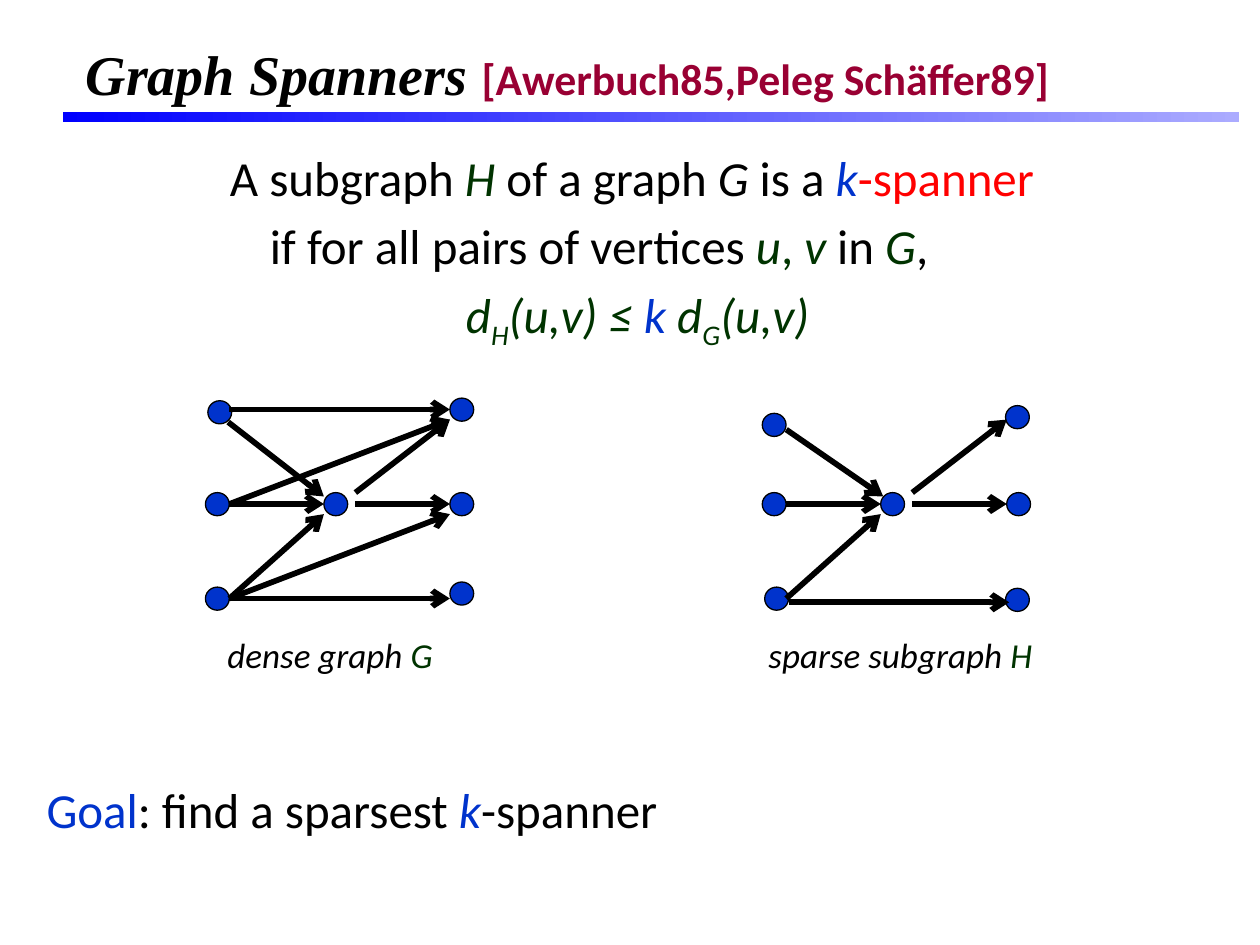
from dataclasses import dataclass
from typing import NamedTuple

from lxml.etree import SubElement
from pptx import Presentation
from pptx.dml.color import RGBColor
from pptx.enum.shapes import MSO_CONNECTOR, MSO_SHAPE
from pptx.enum.text import MSO_ANCHOR, MSO_AUTO_SIZE, PP_ALIGN
from pptx.oxml.ns import qn
from pptx.util import Pt


@dataclass(frozen=True)
class Theme:
    black: str = "000000"
    blue: str = "0033CC"
    green: str = "003300"
    red: str = "FF0000"
    wine: str = "990033"
    bar: tuple = ("0000FF", "ABABFF")
    font: str = "Calibri"
    serif: str = "Times New Roman"
    title: float = 32
    cite: float = 25
    body: float = 28
    label: float = 20


T = Theme()


class Run(NamedTuple):
    text: str
    color: str = T.black
    italic: bool = False
    sub: bool = False


class Line(NamedTuple):
    runs: list
    align: PP_ALIGN = PP_ALIGN.CENTER
    left: float = 0
    before: float = 5.6


class Box(NamedTuple):
    x: float
    y: float
    w: float
    h: float


class Edge(NamedTuple):
    x1: float
    y1: float
    x2: float
    y2: float


class Graph(NamedTuple):
    x: float
    dots: list
    edges: list
    label: Box
    runs: list


def rgb(code: str) -> RGBColor:
    return RGBColor.from_string(code)


def place(shape, box: Box) -> None:
    shape.left, shape.top, shape.width, shape.height = map(Pt, box)


def write(para, runs: list, size: float) -> None:
    para.font.name, para.font.size = T.font, Pt(size)
    for item in runs:
        run = para.add_run()
        run.text = item.text
        run.font.color.rgb = rgb(item.color)
        run.font.italic = item.italic
        if item.sub:
            run.font._element.set("baseline", "-25000")


def draw_dot(shapes, x: float, y: float) -> None:
    dot = shapes.add_shape(MSO_SHAPE.OVAL, Pt(x), Pt(y), Pt(13.6), Pt(13.2))
    dot.shadow.inherit = False
    dot.fill.solid()
    dot.fill.fore_color.rgb = rgb(T.blue)
    dot.line.color.rgb = rgb(T.black)
    dot.line.width = Pt(0.75)


def draw_edge(shapes, x: float, edge: Edge) -> None:
    line = shapes.add_connector(MSO_CONNECTOR.STRAIGHT, Pt(x + edge.x1), Pt(edge.y1),
                                Pt(x + edge.x2), Pt(edge.y2))
    line.line.color.rgb = rgb(T.black)
    line.line.width = Pt(3.25)
    SubElement(line.line._get_or_add_ln(), qn("a:tailEnd"), type="arrow")
    SubElement(line._element.spPr, qn("a:effectLst"))


def draw_graph(shapes, graph: Graph) -> None:
    for x, y in SHARED_DOTS + graph.dots:
        draw_dot(shapes, graph.x + x, y)
    for edge in SHARED_EDGES + graph.edges:
        draw_edge(shapes, graph.x, edge)
    text = shapes.add_textbox(*map(Pt, graph.label)).text_frame
    text.word_wrap = False
    text.paragraphs[0].alignment = PP_ALIGN.CENTER
    write(text.paragraphs[0], graph.runs, T.label)


# Columns where edges start and end, measured from the left of a graph
START, MID, OUT, END = 13.7, 67.7, 85.7, 139.7
ROW, LOW = 288, 342

# Parts that both graphs have
SHARED_DOTS = [(x, 281.5) for x in (0, MID, END)]
SHARED_EDGES = [
    Edge(START, LOW, MID, 293.8),
    Edge(START, ROW, MID, ROW),
    Edge(OUT, ROW, END, ROW),
    Edge(OUT, 281.5, END, 239.8),
]

GRAPHS = [
    Graph(117.4, [(1.4, 229), (END, 227.5), (END, 332.6), (0, 335.5)],
          [Edge(13, 241.2, MID, 283.7), Edge(START, LOW, END, LOW),
           Edge(START, LOW, END, 293.8), Edge(START, ROW, END, 239.8),
           Edge(START, 234, END, 234)],
          Box(122.4, 358.6, 132.5, 31.5),
          [Run("dense graph ", italic=True), Run("G", T.green, True)]),
    Graph(435.6, [(0, 236.2), (139, 231.8), (139, 336.2), (1.4, 335.5)],
          [Edge(START, 245.5, 69.1, 283.7), Edge(15.1, 344.2, 141.1, 344.2)],
          Box(431.3, 358.6, 166.3, 31.5),
          [Run("sparse subgraph ", italic=True), Run("H", T.green, True)]),
]

# The second line is centred further left than the first and third
SHIFT = 44
LINES = [
    Line([Run("A subgraph "), Run("H", T.green, True), Run(" of a graph "),
          Run("G ", italic=True), Run("is a "), Run("k", T.blue, True),
          Run("-spanner ", T.red)], left=SHIFT),
    Line([Run("if for all pairs of vertices "), Run("u", T.green, True),
          Run(", ", T.green), Run("v", T.green, True), Run(" in "),
          Run("G", T.green, True), Run(",")]),
    Line([Run("d", T.green, True), Run("H", T.green, True, True),
          Run("(u,v) ≤ ", T.green, True), Run("k", T.blue, True),
          Run(" d", T.green, True), Run("G", T.green, True, True),
          Run("(u,v)", T.green, True)], left=SHIFT),
    Line([Run("Goal", T.blue), Run(": find a sparsest "), Run("k", T.blue, True),
          Run("-spanner")], PP_ALIGN.LEFT, before=244.4),
]


def draw_title(shape) -> None:
    place(shape, Box(41.8, 5.8, 612, 72))
    text = shape.text_frame
    text.auto_size, text.vertical_anchor = MSO_AUTO_SIZE.NONE, MSO_ANCHOR.MIDDLE
    para = text.paragraphs[0]
    para.alignment = PP_ALIGN.LEFT
    write(para, [Run("Graph Spanners ", italic=True),
                 Run("[Awerbuch85,Peleg Schäffer89]", T.wine)], T.title)
    para.font.bold = True
    name, cite = para.runs
    name.font.name, cite.font.size = T.serif, Pt(T.cite)


def draw_body(shape) -> None:
    place(shape, Box(19.4, 80.6, 689.8, 414))
    text = shape.text_frame
    text.auto_size = MSO_AUTO_SIZE.NONE
    text.margin_right = Pt(7.2 + SHIFT)
    for i, line in enumerate(LINES):
        para = text.add_paragraph() if i else text.paragraphs[0]
        para.alignment, para.space_before = line.align, Pt(line.before)
        props = para._p.get_or_add_pPr()
        props.set("marL", str(Pt(line.left)))
        props.set("indent", "0")
        SubElement(props, qn("a:buNone"))
        write(para, line.runs, T.body)


def draw_bar(shapes) -> None:
    bar = shapes.add_shape(MSO_SHAPE.RECTANGLE, Pt(36), Pt(64), Pt(672), Pt(5.8))
    bar.shadow.inherit = False
    bar.line.fill.background()
    bar.fill.gradient()
    bar.fill.gradient_angle = 0
    for stop, code in zip(bar.fill.gradient_stops, T.bar):
        stop.color.rgb = rgb(code)


def main() -> None:
    deck = Presentation()
    deck.slide_width, deck.slide_height = Pt(720), Pt(540)
    slide = deck.slides.add_slide(deck.slide_layouts[1])
    draw_bar(slide.shapes)
    draw_title(slide.shapes.title)
    draw_body(slide.placeholders[1])
    for graph in GRAPHS:
        draw_graph(slide.shapes, graph)
    deck.save("out.pptx")


if __name__ == "__main__":
    main()
